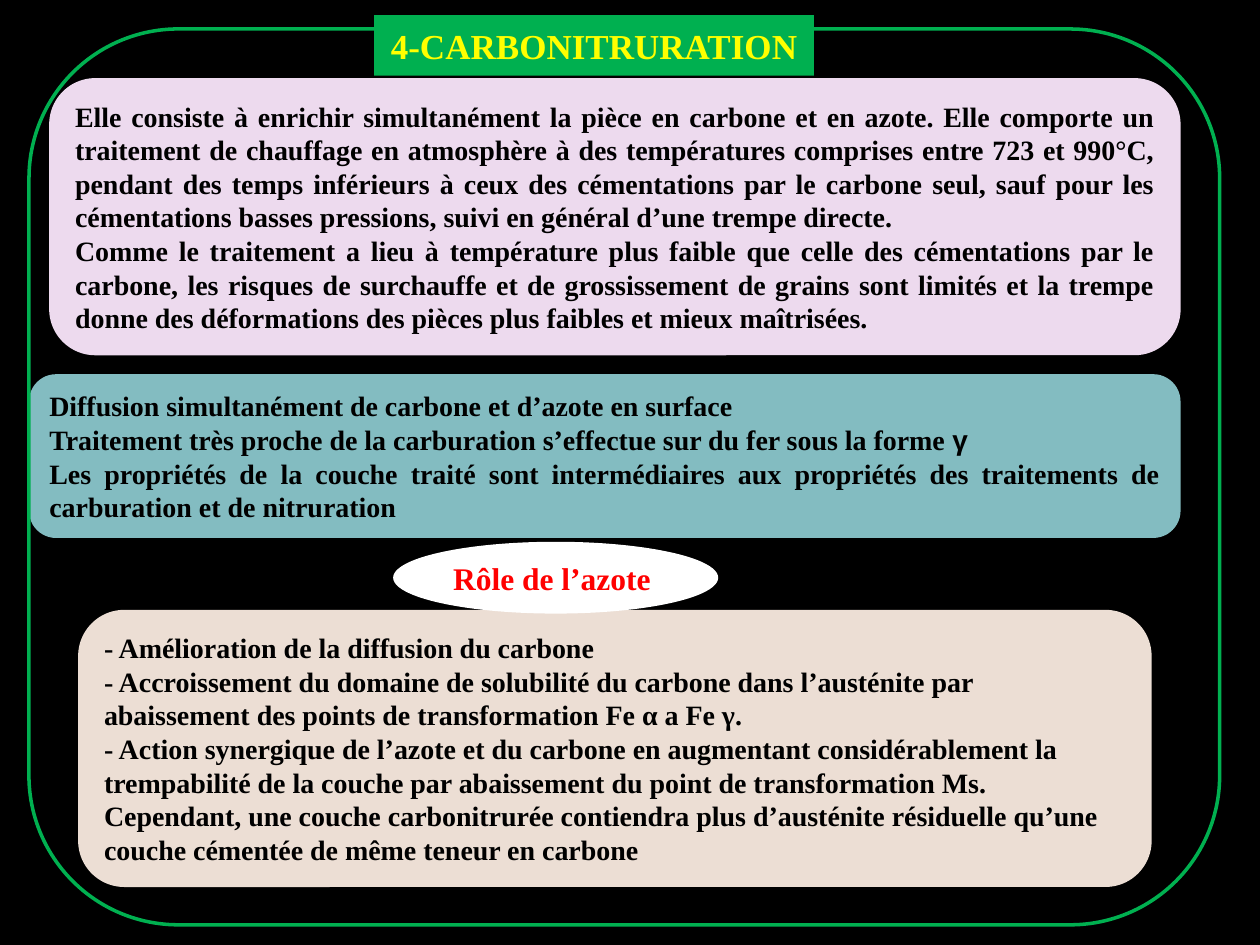
from lxml.etree import SubElement
from pptx import Presentation
from pptx.dml.color import RGBColor
from pptx.enum.shapes import MSO_SHAPE as Shape
from pptx.enum.text import MSO_ANCHOR as Anchor, MSO_AUTO_SIZE as AutoSize, PP_ALIGN as Align
from pptx.oxml.ns import qn
from pptx.util import Inches, Pt

BLACK = RGBColor(0x00, 0x00, 0x00)
WHITE = RGBColor(0xFF, 0xFF, 0xFF)
GREEN = RGBColor(0x00, 0xB0, 0x50)
YELLOW = RGBColor(0xFF, 0xFF, 0x00)
RED = RGBColor(0xFF, 0x00, 0x00)
LILAC = RGBColor(0xED, 0xDA, 0xEE)
TEAL = RGBColor(0x83, 0xBC, 0xC1)
SAND = RGBColor(0xEC, 0xDE, 0xD4)
SERIF, SANS = "Times New Roman", "Arial"

# Each paragraph is a list of (text, font) runs
DEFINITION = [
    [("Elle consiste à enrichir simultanément la pièce en carbone et en azote. "
      "Elle comporte un traitement de chauffage en atmosphère à des températures "
      "comprises entre 723 et 990°C, pendant des temps inférieurs à ceux des "
      "cémentations par le carbone seul, sauf pour les cémentations basses "
      "pressions, suivi en général d’une trempe directe.", SERIF)],
    [("Comme le traitement a lieu à température plus faible que celle des "
      "cémentations par le carbone, les risques de surchauffe et de grossissement "
      "de grains sont limités et la trempe donne des déformations des pièces plus "
      "faibles et mieux maîtrisées.", SERIF)],
]
DIFFUSION = [
    [("Diffusion simultanément de carbone et d’azote en surface", SERIF)],
    [("Traitement très proche de la carburation s’effectue sur du fer sous la forme ",
      SERIF), ("γ", SANS)],
    [("Les propriétés de la couche traité sont intermédiaires aux propriétés des "
      "traitements de carburation et de nitruration", SERIF)],
]
NITROGEN_EFFECTS = [
    [("- Amélioration de la diffusion du carbone", SERIF)],
    [("- Accroissement du domaine de solubilité du carbone dans l’austénite par "
      "abaissement des points de transformation Fe α a Fe γ.", SERIF)],
    [("- Action synergique de l’azote et du carbone en augmentant "
      "considérablement la", SERIF)],
    [("trempabilité de la couche par abaissement du point de transformation Ms. "
      "Cependant, une couche carbonitrurée contiendra plus d’austénite résiduelle "
      "qu’une couche cémentée de même teneur en carbone", SERIF)],
]


def write_text(frame, paragraphs, size, color, align):
    frame.vertical_anchor = Anchor.MIDDLE
    for index, runs in enumerate(paragraphs):
        paragraph = frame.add_paragraph() if index else frame.paragraphs[0]
        paragraph.alignment = align
        for text, font_name in runs:
            run = paragraph.add_run()
            run.text = text
            run.font.name = font_name
            run.font.size = Pt(size)
            run.font.bold = True
            run.font.color.rgb = color


def place_title(slide, box):
    title = slide.shapes.title
    title.left, title.top, title.width, title.height = map(Inches, box)
    # Rounded outline for the title placeholder
    outline = SubElement(title.element.spPr, qn("a:prstGeom"), prst="roundRect")
    SubElement(outline, qn("a:avLst"))
    title.fill.solid()
    title.fill.fore_color.rgb = GREEN
    frame = title.text_frame
    frame.auto_size = AutoSize.NONE
    frame.word_wrap = False
    write_text(frame, [[("4-CARBONITRURATION", SERIF)]], 20, YELLOW, Align.CENTER)


def place_panel(slide, box, fill, paragraphs, align, kind=Shape.ROUNDED_RECTANGLE,
                size=16, color=BLACK):
    panel = slide.shapes.add_shape(kind, *map(Inches, box))
    panel.shadow.inherit = False
    panel.fill.solid()
    panel.fill.fore_color.rgb = fill
    panel.line.fill.background()
    panel.text_frame.word_wrap = True
    write_text(panel.text_frame, paragraphs, size, color, align)


def place_border(slide, box):
    border = slide.shapes.add_shape(Shape.ROUNDED_RECTANGLE, *map(Inches, box))
    border.shadow.inherit = False
    border.fill.background()
    border.line.color.rgb = GREEN
    border.line.width = Pt(2)


def main():
    prs = Presentation()
    prs.slide_width, prs.slide_height = Inches(10), Inches(7.5)
    slide = prs.slides.add_slide(prs.slide_layouts[5])
    slide.background.fill.solid()
    slide.background.fill.fore_color.rgb = BLACK

    place_title(slide, (2.97, 0.12, 3.49, 0.48))
    # Definition and diffusion, with the border passing over them
    place_panel(slide, (0.39, 0.62, 8.98, 2.2), LILAC, DEFINITION, Align.JUSTIFY)
    place_panel(slide, (0.23, 2.97, 9.14, 1.3), TEAL, DIFFUSION, Align.JUSTIFY)
    place_border(slide, (0.23, 0.23, 9.45, 7.11))
    # Role of nitrogen: effects, then the heading that overlaps them
    place_panel(slide, (0.62, 4.84, 8.52, 2.2), SAND, NITROGEN_EFFECTS, Align.LEFT)
    place_panel(slide, (3.12, 4.3, 2.58, 0.57), WHITE, [[("Rôle de l’azote", SERIF)]],
                Align.LEFT, kind=Shape.OVAL, size=18, color=RED)

    prs.save("out.pptx")


if __name__ == "__main__":
    main()
